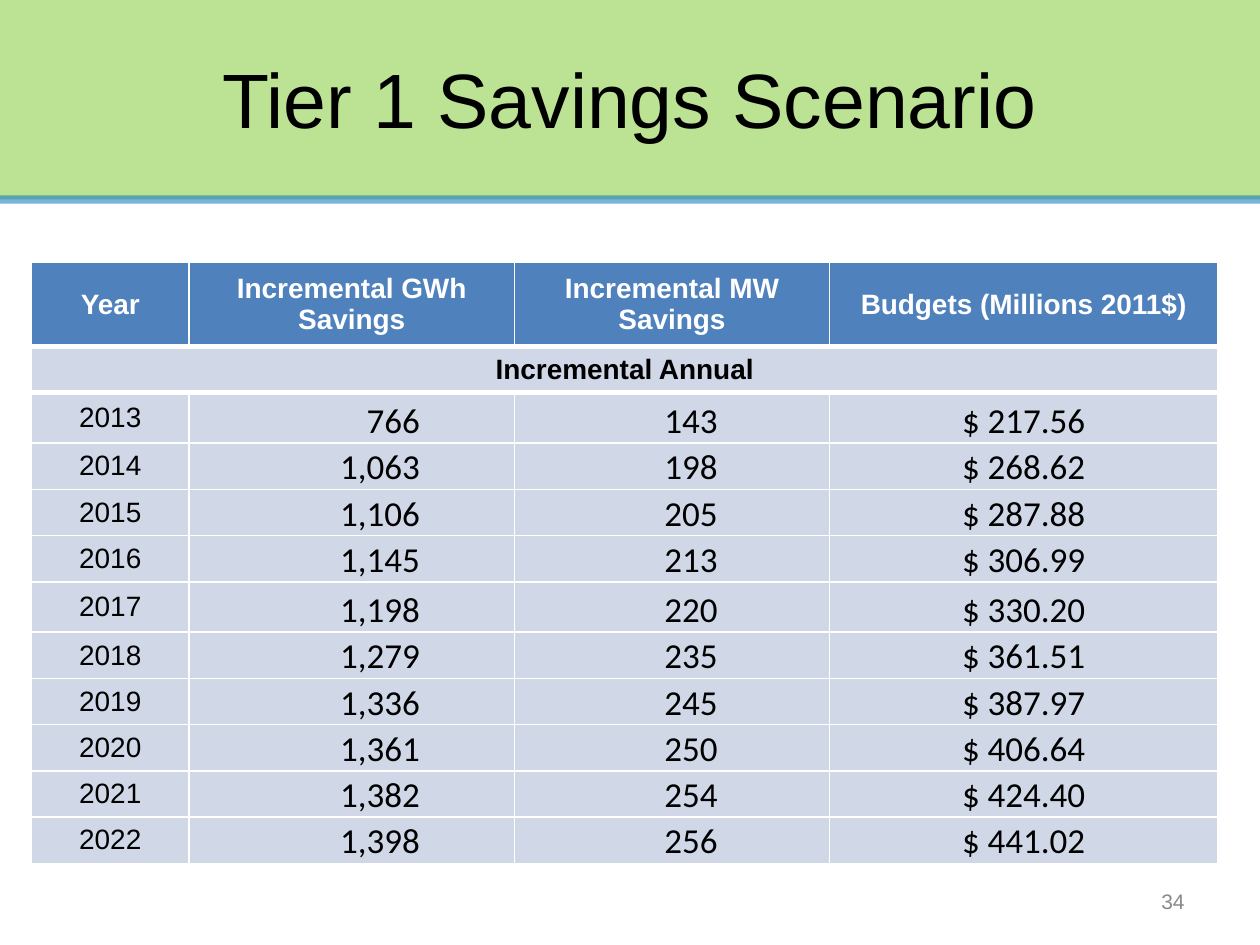
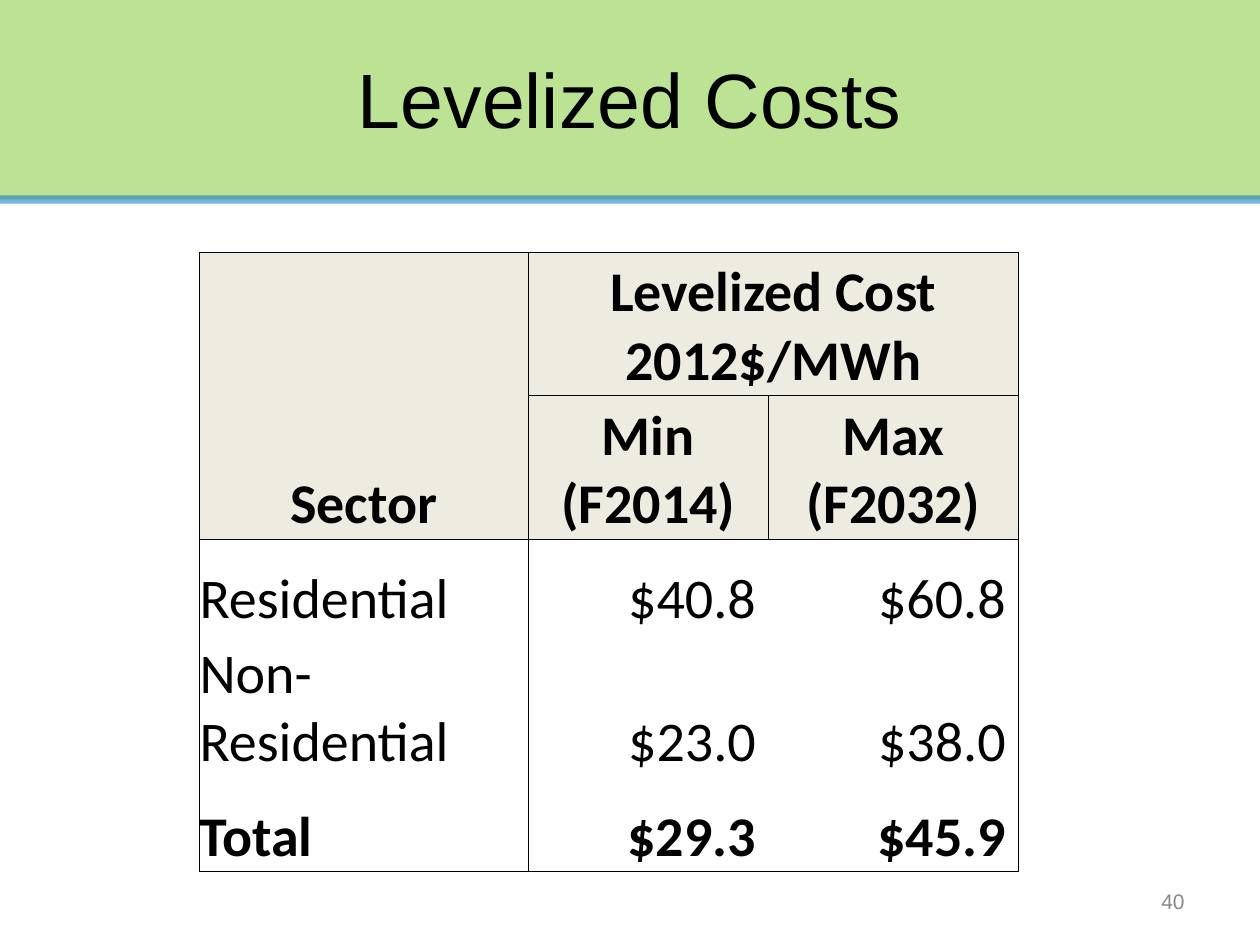
from lxml.etree import SubElement
from pptx import Presentation
from pptx.dml.color import RGBColor
from pptx.enum.shapes import MSO_CONNECTOR as Connector, MSO_SHAPE as Preset
from pptx.enum.text import MSO_ANCHOR as Anchor, PP_ALIGN as Align
from pptx.oxml.ns import qn
from pptx.util import Emu, Inches, Pt

BLACK = RGBColor(0x00, 0x00, 0x00)
WHITE = RGBColor(0xFF, 0xFF, 0xFF)
GREEN = RGBColor(0x92, 0xD0, 0x50)
RULE_BLUE = RGBColor(0x00, 0x70, 0xC0)
HEADER_BLUE = RGBColor(0x4F, 0x81, 0xBD)
PALE_BLUE = RGBColor(0xD0, 0xD8, 0xE8)
BEIGE = RGBColor(0xEE, 0xEC, 0xE1)
GREY = RGBColor(0x89, 0x89, 0x89)

COLUMNS, ROWS = 120, 90
SLIDE_WIDTH, SLIDE_HEIGHT = Inches(10), Inches(7.5)
BAND_ROWS = 19
CELL_MARGINS = (0.1, 0.05, 0.1, 0.05)
NO_MARGINS = (0, 0, 0, 0)

SAVINGS = [
    ("2013", "766", "143", "217.56"),
    ("2014", "1,063", "198", "268.62"),
    ("2015", "1,106", "205", "287.88"),
    ("2016", "1,145", "213", "306.99"),
    ("2017", "1,198", "220", "330.20"),
    ("2018", "1,279", "235", "361.51"),
    ("2019", "1,336", "245", "387.97"),
    ("2020", "1,361", "250", "406.64"),
    ("2021", "1,382", "254", "424.40"),
    ("2022", "1,398", "256", "441.02"),
]
COSTS = [
    ("Residential", "$40.8", "$60.8"),
    ("Non-Residential", "$23.0", "$38.0"),
    ("Total", "$29.3", "$45.9"),
]


def across(columns):
    return Emu(round(SLIDE_WIDTH * columns / COLUMNS))


def down(rows):
    return Emu(round(SLIDE_HEIGHT * rows / ROWS))


def area(left, top, width, height):
    return across(left), down(top), across(width), down(height)


def write_text(frame, text, size=16, font="Arial", color=BLACK, bold=False,
               align=Align.CENTER):
    frame.word_wrap = True
    paragraph = frame.paragraphs[0]
    paragraph.alignment = align
    run = paragraph.add_run()
    run.text = text
    run.font.size = Pt(size)
    run.font.name = font
    run.font.bold = bold
    run.font.color.rgb = color


def add_text(slide, place, text, **style):
    frame = slide.shapes.add_textbox(*area(*place)).text_frame
    frame.vertical_anchor = Anchor.MIDDLE
    write_text(frame, text, **style)


def set_opacity(shape_fill, percent):
    color = shape_fill.find(qn("a:solidFill")).find(qn("a:srgbClr"))
    SubElement(color, qn("a:alpha"), val=str(percent * 1000))


def add_frame(presentation, title, number):
    slide = presentation.slides.add_slide(presentation.slide_layouts[6])
    band = slide.shapes.add_shape(Preset.RECTANGLE, *area(0, 0, COLUMNS, BAND_ROWS))
    band.shadow.inherit = False
    band.fill.solid()
    band.fill.fore_color.rgb = GREEN
    band.line.fill.background()
    set_opacity(band.element.spPr, 61)

    rule = slide.shapes.add_connector(Connector.STRAIGHT, 0, down(BAND_ROWS),
                                      across(COLUMNS), down(BAND_ROWS))
    rule.line.width = Pt(4.75)
    rule.line.color.rgb = RULE_BLUE
    properties = rule.element.spPr
    set_opacity(properties.find(qn("a:ln")), 53)
    SubElement(properties, qn("a:effectLst"))

    add_text(slide, (86, 83.4, 28, 4.8), number, size=12, color=GREY, align=Align.RIGHT)
    add_text(slide, (6, 0, 108, 18.6), title, size=44)
    return slide


def add_table(slide, left, top, widths, heights):
    place = area(left, top, sum(widths), sum(heights))
    table = slide.shapes.add_table(len(heights), len(widths), *place).table
    table.first_row = table.horz_banding = False
    for column, width in zip(table.columns, widths):
        column.width = across(width)
    for row, height in zip(table.rows, heights):
        row.height = down(height)
    return table


def set_borders(cell, color, left=0, right=0, top=0, bottom=0):
    properties = cell._tc.get_or_add_tcPr()
    for side, width in zip("LRTB", (left, right, top, bottom)):
        line = SubElement(properties, qn(f"a:ln{side}"), w=str(Pt(width)))
        if width:
            fill = SubElement(line, qn("a:solidFill"))
            SubElement(fill, qn("a:srgbClr"), val=str(color))
        else:
            SubElement(line, qn("a:noFill"))


def set_fill(cell, color):
    if color is None:
        cell.fill.background()
    else:
        cell.fill.solid()
        cell.fill.fore_color.rgb = color


def write_cell(cell, text, margins=NO_MARGINS, anchor=Anchor.BOTTOM, **style):
    cell.margin_left, cell.margin_top, cell.margin_right, cell.margin_bottom = map(
        Inches, margins)
    cell.vertical_anchor = anchor
    write_text(cell.text_frame, text, **style)


def add_savings_table(slide):
    heights = [8, 4.4] + [4.8 if year in ("2013", "2017") else 4.4
                          for year, *_ in SAVINGS]
    table = add_table(slide, 3, 25, [15, 31, 30, 37], heights)
    for row_index, row in enumerate(table.rows):
        for cell in row.cells:
            set_borders(cell, WHITE, left=1, right=1,
                        top=3 if row_index in (1, 2) else 1,
                        bottom=3 if row_index in (0, 1) else 1)
            set_fill(cell, PALE_BLUE if row_index else HEADER_BLUE)

    label = dict(margins=CELL_MARGINS, anchor=Anchor.MIDDLE)
    headings = ("Year", "Incremental GWh Savings", "Incremental MW Savings",
                "Budgets (Millions 2011$)")
    for column, heading in enumerate(headings):
        write_cell(table.cell(0, column), heading, color=WHITE, bold=True, **label)
    table.cell(1, 0).merge(table.cell(1, 3))
    write_cell(table.cell(1, 0), "Incremental Annual", bold=True, **label)

    value = dict(size=20, font="Calibri")
    for row, (year, energy, power, budget) in enumerate(SAVINGS, start=2):
        write_cell(table.cell(row, 0), year, **label)
        write_cell(table.cell(row, 1), energy, margins=(0, 0, 0.75, 0),
                   align=Align.RIGHT, **value)
        write_cell(table.cell(row, 2), power, margins=(1.19, 0, 0, 0),
                   align=Align.LEFT, **value)
        write_cell(table.cell(row, 3), f"$ {budget}", **value)


def add_cost_table(slide):
    table = add_table(slide, 19, 24, [31.3, 22.9, 23.8], [13.67, 13.67, 9, 13.67, 9])
    for row_index, row in enumerate(table.rows):
        header = row_index < 2
        for column_index, cell in enumerate(row.cells):
            set_borders(cell, BLACK,
                        left=0.5 if header or column_index < 2 else 0,
                        right=0.5 if header or column_index != 1 else 0,
                        top=0.5 if row_index <= 2 else 0,
                        bottom=0.5 if header or row_index == 4 else 0)
            set_fill(cell, BEIGE if header else None)

    style = dict(size=32, font="Calibri")
    table.cell(0, 0).merge(table.cell(1, 0))
    table.cell(0, 1).merge(table.cell(0, 2))
    headings = {(0, 0): "Sector", (0, 1): "Levelized Cost 2012$/MWh",
                (1, 1): "Min (F2014)", (1, 2): "Max (F2032)"}
    for position, heading in headings.items():
        write_cell(table.cell(*position), heading, bold=True, **style)

    for row, (sector, *costs) in enumerate(COSTS, start=2):
        bold = sector == "Total"
        write_cell(table.cell(row, 0), sector, bold=bold, align=Align.LEFT, **style)
        for column, cost in enumerate(costs, start=1):
            write_cell(table.cell(row, column), cost, margins=(0, 0, 0.1, 0),
                       bold=bold, align=Align.RIGHT, **style)


def main():
    presentation = Presentation()
    presentation.slide_width, presentation.slide_height = SLIDE_WIDTH, SLIDE_HEIGHT
    add_savings_table(add_frame(presentation, "Tier 1 Savings Scenario", "34"))
    add_cost_table(add_frame(presentation, "Levelized Costs", "40"))
    presentation.save("out.pptx")


if __name__ == "__main__":
    main()
